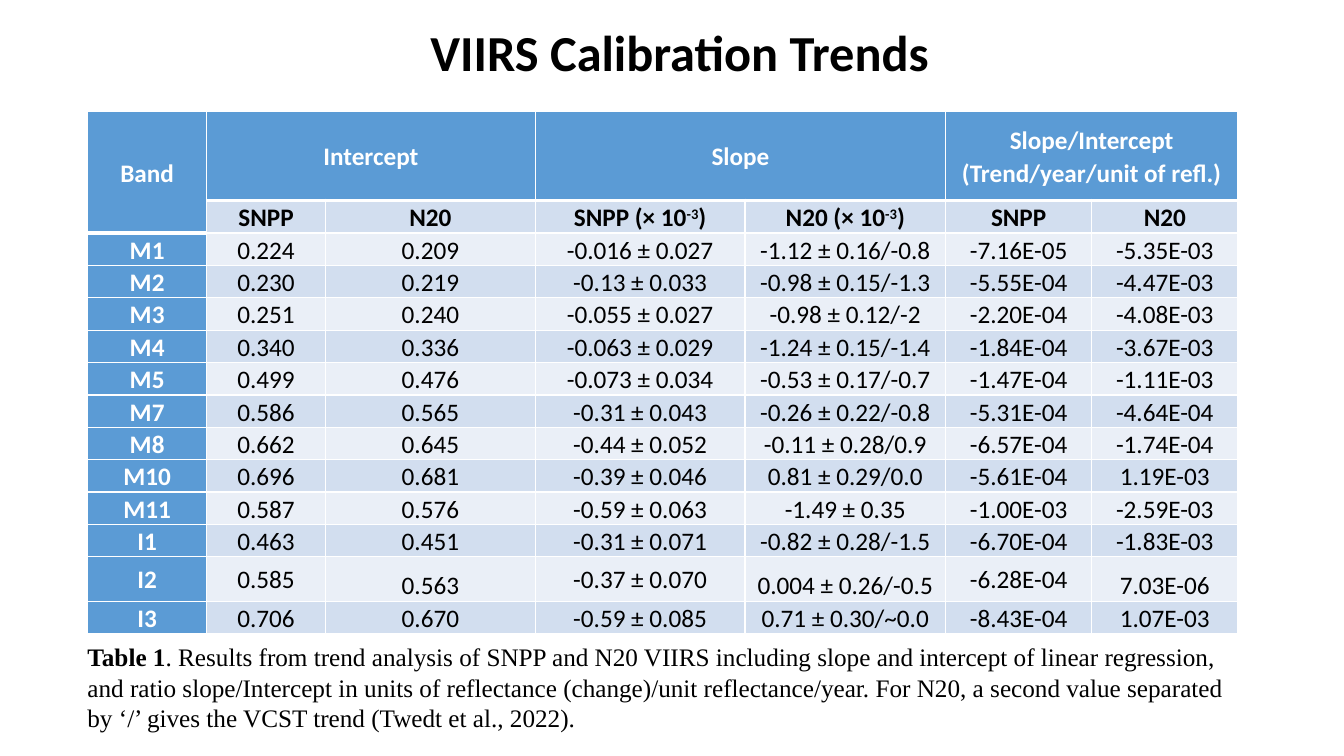
from lxml.etree import SubElement
from pptx import Presentation
from pptx.dml.color import RGBColor
from pptx.enum.text import MSO_ANCHOR, MSO_AUTO_SIZE, PP_ALIGN
from pptx.oxml.ns import qn
from pptx.util import Pt

# Content
TITLE = "VIIRS Calibration Trends"
CAPTION_LABEL = "Table 1"
CAPTION = (
    ". Results from trend analysis of SNPP and N20 VIIRS including slope and intercept "
    "of linear regression, and ratio slope/Intercept in units of reflectance "
    "(change)/unit reflectance/year. For N20, a second value separated by ‘/’ gives "
    "the VCST trend (Twedt et al., 2022)."
)
BAND_HEADING = "Band"
GROUPS = [
    ["Intercept"],
    ["Slope"],
    ["Slope/Intercept", "(Trend/year/unit of refl.)"],
]
# Each subheading: text, superscript, text after it
SUBHEADINGS = [
    ("SNPP",), ("N20",),
    ("SNPP (× 10", "-3", ")"), ("N20 (× 10", "-3", ")"),
    ("SNPP",), ("N20",),
]
BANDS = [
    ("M1", "0.224", "0.209", "-0.016 ± 0.027", "-1.12 ± 0.16/-0.8", "-7.16E-05", "-5.35E-03"),
    ("M2", "0.230", "0.219", "-0.13 ± 0.033", "-0.98 ± 0.15/-1.3", "-5.55E-04", "-4.47E-03"),
    ("M3", "0.251", "0.240", "-0.055 ± 0.027", "-0.98 ± 0.12/-2", "-2.20E-04", "-4.08E-03"),
    ("M4", "0.340", "0.336", "-0.063 ± 0.029", "-1.24 ± 0.15/-1.4", "-1.84E-04", "-3.67E-03"),
    ("M5", "0.499", "0.476", "-0.073 ± 0.034", "-0.53 ± 0.17/-0.7", "-1.47E-04", "-1.11E-03"),
    ("M7", "0.586", "0.565", "-0.31 ± 0.043", "-0.26 ± 0.22/-0.8", "-5.31E-04", "-4.64E-04"),
    ("M8", "0.662", "0.645", "-0.44 ± 0.052", "-0.11 ± 0.28/0.9", "-6.57E-04", "-1.74E-04"),
    ("M10", "0.696", "0.681", "-0.39 ± 0.046", "0.81 ± 0.29/0.0", "-5.61E-04", "1.19E-03"),
    ("M11", "0.587", "0.576", "-0.59 ± 0.063", "-1.49 ± 0.35", "-1.00E-03", "-2.59E-03"),
    ("I1", "0.463", "0.451", "-0.31 ± 0.071", "-0.82 ± 0.28/-1.5", "-6.70E-04", "-1.83E-03"),
    ("I2", "0.585", "0.563", "-0.37 ± 0.070", "0.004 ± 0.26/-0.5", "-6.28E-04", "7.03E-06"),
    ("I3", "0.706", "0.670", "-0.59 ± 0.085", "0.71 ± 0.30/~0.0", "-8.43E-04", "1.07E-03"),
]

# Style
BLACK = RGBColor(0x00, 0x00, 0x00)
WHITE = RGBColor(0xFF, 0xFF, 0xFF)
BLUE = RGBColor(0x5B, 0x9B, 0xD5)
BAND_FILLS = [RGBColor(0xD2, 0xDE, 0xEF), RGBColor(0xEA, 0xEF, 0xF7)]
SANS, SERIF = "Calibri", "Times New Roman"
BODY_SIZE = 18

# Layout in points
COLUMN_WIDTHS = [85, 85, 149.8, 149.8, 143.3, 104.4, 104.4]
HEADER_HEIGHT, ROW_HEIGHT, TALL_HEIGHT = 63.4, 20.2, 31.7
TALL_BAND = "I2"
TABLE_LEFT, TABLE_TOP, TABLE_HEIGHT = 62.6, 79.9, 360


def add_run(para, text, size=BODY_SIZE, font=SANS, color=BLACK, bold=False):
    span = para.add_run()
    span.text = text
    span.font.size = Pt(size)
    span.font.name = font
    span.font.bold = bold
    span.font.color.rgb = color
    return span


def add_text_box(slide, left, top, width, height):
    box = slide.shapes.add_textbox(Pt(left), Pt(top), Pt(width), Pt(height))
    box.text_frame.word_wrap = True
    box.text_frame.auto_size = MSO_AUTO_SIZE.SHAPE_TO_FIT_TEXT
    return box.text_frame


def set_borders(cell, bottom):
    properties = cell._tc.get_or_add_tcPr()
    widths = {"a:lnL": 1, "a:lnR": 1, "a:lnT": 1, "a:lnB": bottom}
    for position, (tag, width) in enumerate(widths.items()):
        line = SubElement(properties, qn(tag), w=str(Pt(width)))
        fill = SubElement(line, qn("a:solidFill"))
        SubElement(fill, qn("a:srgbClr"), val=str(WHITE))
        properties.insert(position, line)  # borders come before the fill


def fill_cell(cell, paragraphs, fill, color=BLACK, bold=True, anchor=MSO_ANCHOR.MIDDLE):
    """Each paragraph is a tuple of runs; every second run is superscript."""
    cell.fill.solid()
    cell.fill.fore_color.rgb = fill
    cell.margin_left = cell.margin_right = Pt(5)
    cell.margin_top = cell.margin_bottom = Pt(0)
    cell.vertical_anchor = anchor
    frame = cell.text_frame
    for index, runs in enumerate(paragraphs):
        para = frame.add_paragraph() if index else frame.paragraphs[0]
        para.alignment = PP_ALIGN.CENTER
        para.line_spacing = 1.07
        if index:
            para.space_after = Pt(8)
        for order, text in enumerate(runs):
            span = add_run(para, text, color=color, bold=bold)
            if order % 2:
                span._r.get_or_add_rPr().set("baseline", "30000")


def add_trend_table(slide):
    heights = [HEADER_HEIGHT, ROW_HEIGHT]
    heights += [TALL_HEIGHT if band[0] == TALL_BAND else ROW_HEIGHT for band in BANDS]
    frame = slide.shapes.add_table(
        len(heights), len(COLUMN_WIDTHS), Pt(TABLE_LEFT), Pt(TABLE_TOP),
        Pt(sum(COLUMN_WIDTHS)), Pt(TABLE_HEIGHT))
    table = frame.table
    for column, width in zip(table.columns, COLUMN_WIDTHS):
        column.width = Pt(width)
    for row, height in zip(table.rows, heights):
        row.height = Pt(height)
    frame.height = Pt(TABLE_HEIGHT)

    # Headings
    table.cell(0, 0).merge(table.cell(1, 0))
    fill_cell(table.cell(0, 0), [(BAND_HEADING,)], BLUE, WHITE)
    for index, lines in enumerate(GROUPS):
        first = 1 + 2 * index
        table.cell(0, first).merge(table.cell(0, first + 1))
        fill_cell(table.cell(0, first), [(line,) for line in lines], BLUE, WHITE)
    for column, runs in enumerate(SUBHEADINGS, 1):
        fill_cell(table.cell(1, column), [runs], BAND_FILLS[0])

    # Values: N20 columns sit at the bottom of their cells
    for row, (band, *values) in enumerate(BANDS, 2):
        fill_cell(table.cell(row, 0), [(band,)], BLUE, WHITE)
        for column, value in enumerate(values, 1):
            anchor = MSO_ANCHOR.MIDDLE if column % 2 else MSO_ANCHOR.BOTTOM
            fill_cell(table.cell(row, column), [(value,)], BAND_FILLS[(row + 1) % 2],
                      bold=False, anchor=anchor)

    # Borders: a thick line closes the headings
    for row in range(len(heights)):
        for column in range(len(COLUMN_WIDTHS)):
            heading = row == 0 or (row, column) == (1, 0)
            set_borders(table.cell(row, column), 3 if heading else 1)


def main():
    deck = Presentation()
    deck.slide_width, deck.slide_height = Pt(960), Pt(540)
    page = deck.slides.add_slide(deck.slide_layouts[6])

    # Title
    title = add_text_box(page, 220.3, 11.5, 530.6, 51).paragraphs[0]
    title.alignment = PP_ALIGN.CENTER
    add_run(title, TITLE, size=36, bold=True)

    add_trend_table(page)

    # Caption
    caption = add_text_box(page, 55.4, 454.3, 835.2, 72.7)
    caption.vertical_anchor = MSO_ANCHOR.MIDDLE
    add_run(caption.paragraphs[0], CAPTION_LABEL, font=SERIF, bold=True)
    add_run(caption.paragraphs[0], CAPTION, font=SERIF)

    deck.save("out.pptx")


if __name__ == "__main__":
    main()
